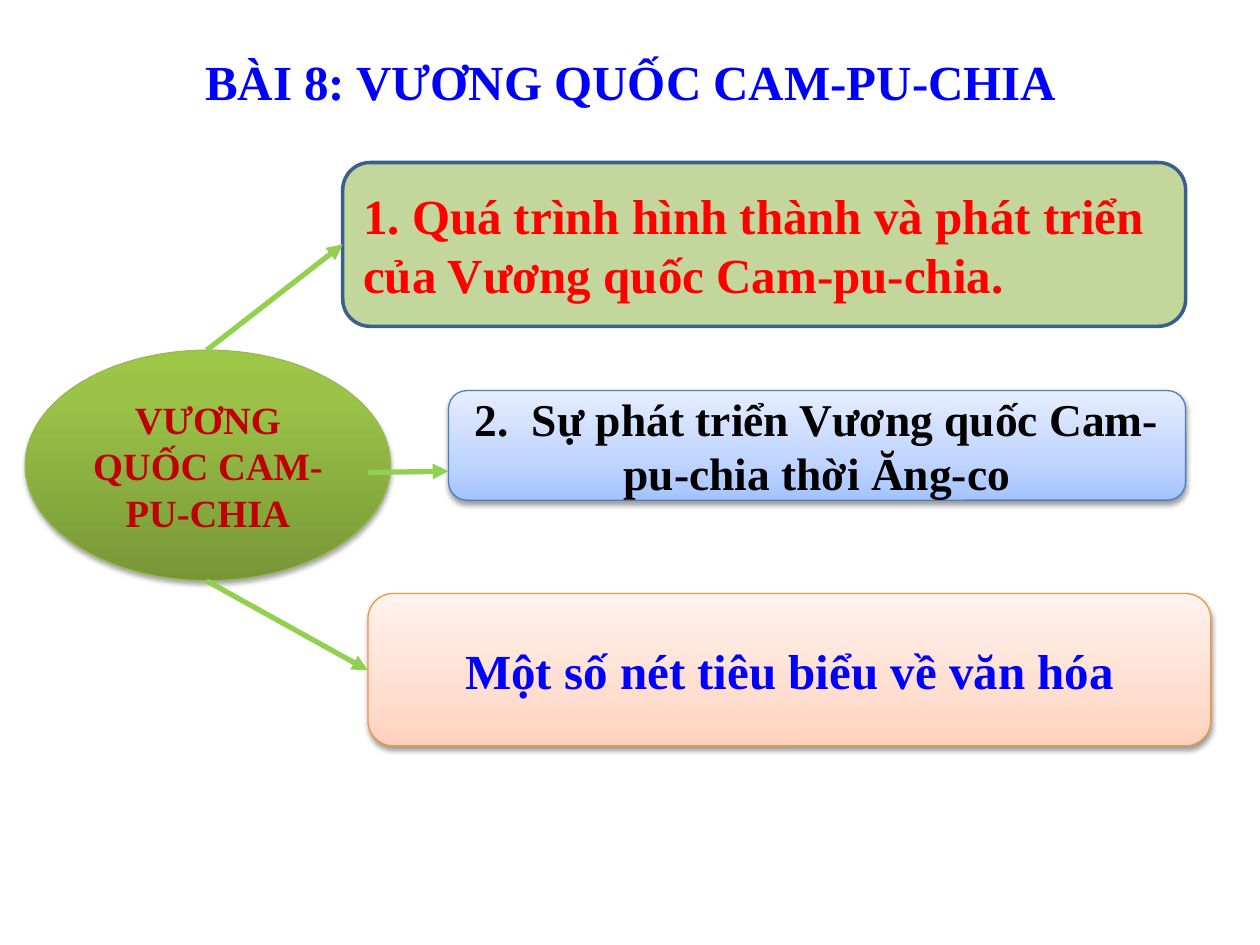
import pptx
import pptx.util
import pptx.dml.color
import pptx.enum.shapes
import pptx.enum.text
import pptx.oxml
import pptx.oxml.ns

RGBColor = pptx.dml.color.RGBColor
Pt = pptx.util.Pt
qn = pptx.oxml.ns.qn
Shape = pptx.enum.shapes.MSO_SHAPE
Align = pptx.enum.text.PP_ALIGN

COLUMNS, ROWS = 100, 75
CELL = pptx.util.Inches(0.1)
FONT = "Times New Roman"

BLUE = RGBColor(0x00, 0x00, 0xFF)
RED = RGBColor(0xFF, 0x00, 0x00)
DARK_RED = RGBColor(0xC0, 0x00, 0x00)
BLACK = RGBColor(0x00, 0x00, 0x00)
ARROW_GREEN = RGBColor(0x92, 0xD0, 0x50)
SAGE = RGBColor(0xC3, 0xD6, 0x9B)
NAVY_LINE = RGBColor(0x3A, 0x5F, 0x8C)
GREEN_LINE = RGBColor(0x98, 0xB9, 0x55)
BLUE_LINE = RGBColor(0x4B, 0x7E, 0xBC)
ORANGE_LINE = RGBColor(0xF6, 0x92, 0x40)
GREEN_BLEND = ((0, RGBColor(0x77, 0x97, 0x37)), (80, RGBColor(0x9B, 0xC3, 0x48)),
               (100, RGBColor(0x9D, 0xC7, 0x46)))
BLUE_BLEND = ((0, RGBColor(0xA4, 0xC4, 0xFF)), (35, RGBColor(0xBF, 0xD4, 0xFF)),
              (100, RGBColor(0xE6, 0xEE, 0xFF)))
ORANGE_BLEND = ((0, RGBColor(0xFF, 0xD2, 0xBD)), (35, RGBColor(0xFF, 0xDE, 0xD0)),
                (100, RGBColor(0xFF, 0xF2, 0xED)))


def grid(*cells):
    return [round(cell * CELL) for cell in cells]


def add_child(parent, tag, **attributes):
    child = parent.makeelement(qn(tag), {key: str(value) for key, value in attributes.items()})
    parent.append(child)
    return child


def write(box, text, size, color, align):
    box.text_frame.word_wrap = True
    box.text_frame.text = text
    para = box.text_frame.paragraphs[0]
    para.alignment = align
    font = para.runs[0].font
    font.name, font.size, font.bold = FONT, Pt(size), True
    font.color.rgb = color


def add_title(page, area, text):
    box = page.shapes.add_textbox(*grid(*area))
    write(box, text, 28, BLUE, Align.CENTER)


def blend(box, stops):
    box.fill.gradient()
    box.fill.gradient_angle = 90
    stop_list = box._element.spPr.find(qn("a:gradFill")).find(qn("a:gsLst"))
    stop_list.clear()
    for position, color in stops:
        stop = add_child(stop_list, "a:gs", pos=position * 1000)
        add_child(stop, "a:srgbClr", val=color)


def cast_shadow(box, opacity, distance):
    effects = box._element.spPr.find(qn("a:effectLst"))
    shadow = add_child(effects, "a:outerShdw", blurRad=Pt(3.1), dist=Pt(distance),
                       dir=90 * 60000, rotWithShape=0)
    add_child(add_child(shadow, "a:srgbClr", val=BLACK), "a:alpha", val=opacity * 1000)


def add_topic(page, kind, area, text, size, color, line, width=0.75, align=Align.CENTER):
    box = page.shapes.add_shape(kind, *grid(*area))
    box.shadow.inherit = False
    box.line.color.rgb = line
    box.line.width = Pt(width)
    box.text_frame.vertical_anchor = pptx.enum.text.MSO_ANCHOR.MIDDLE
    write(box, text, size, color, align)
    return box


def add_arrow(page, start, end):
    arrow = page.shapes.add_connector(pptx.enum.shapes.MSO_CONNECTOR.STRAIGHT,
                                      *grid(*start, *end))
    arrow.line.color.rgb = ARROW_GREEN
    arrow.line.width = Pt(3)
    add_child(arrow.line._get_or_add_ln(), "a:tailEnd", type="triangle")
    add_child(arrow._element.spPr, "a:effectLst")


def main():
    deck = pptx.Presentation()
    deck.slide_width, deck.slide_height = grid(COLUMNS, ROWS)
    page = deck.slides.add_slide(deck.slide_layouts[6])

    add_title(page, (9.8, 3.6, 80.5, 5.7), "BÀI 8: VƯƠNG QUỐC CAM-PU-CHIA")

    hub = add_topic(page, Shape.OVAL, (2, 27.8, 29, 18.3), "VƯƠNG QUỐC CAM-PU-CHIA",
                    22, DARK_RED, GREEN_LINE)
    blend(hub, GREEN_BLEND)
    cast_shadow(hub, 35, 1.8)

    origins = add_topic(page, Shape.ROUNDED_RECTANGLE, (27.2, 12.9, 66.9, 13),
                        "1. Quá trình hình thành và phát triển của Vương quốc Cam-pu-chia.",
                        28, RED, NAVY_LINE, 2, Align.LEFT)
    origins.fill.solid()
    origins.fill.fore_color.rgb = SAGE

    angkor = add_topic(page, Shape.ROUNDED_RECTANGLE, (35.6, 31, 58.5, 8.7),
                       "2.  Sự phát triển Vương quốc Cam-pu-chia thời Ăng-co",
                       26, BLACK, BLUE_LINE)
    culture = add_topic(page, Shape.ROUNDED_RECTANGLE, (29.2, 47.1, 66.9, 12.1),
                        "Một số nét tiêu biểu về văn hóa", 28, BLUE, ORANGE_LINE)
    for box, stops in ((angkor, BLUE_BLEND), (culture, ORANGE_BLEND)):
        blend(box, stops)
        cast_shadow(box, 38, 1.6)

    for start, end in (((16.4, 27.8), (27.2, 19.4)),
                       ((29.2, 37.5), (35.6, 37.4)),
                       ((16.4, 46.1), (29.2, 53.2))):
        add_arrow(page, start, end)

    deck.save("out.pptx")


if __name__ == "__main__":
    main()
